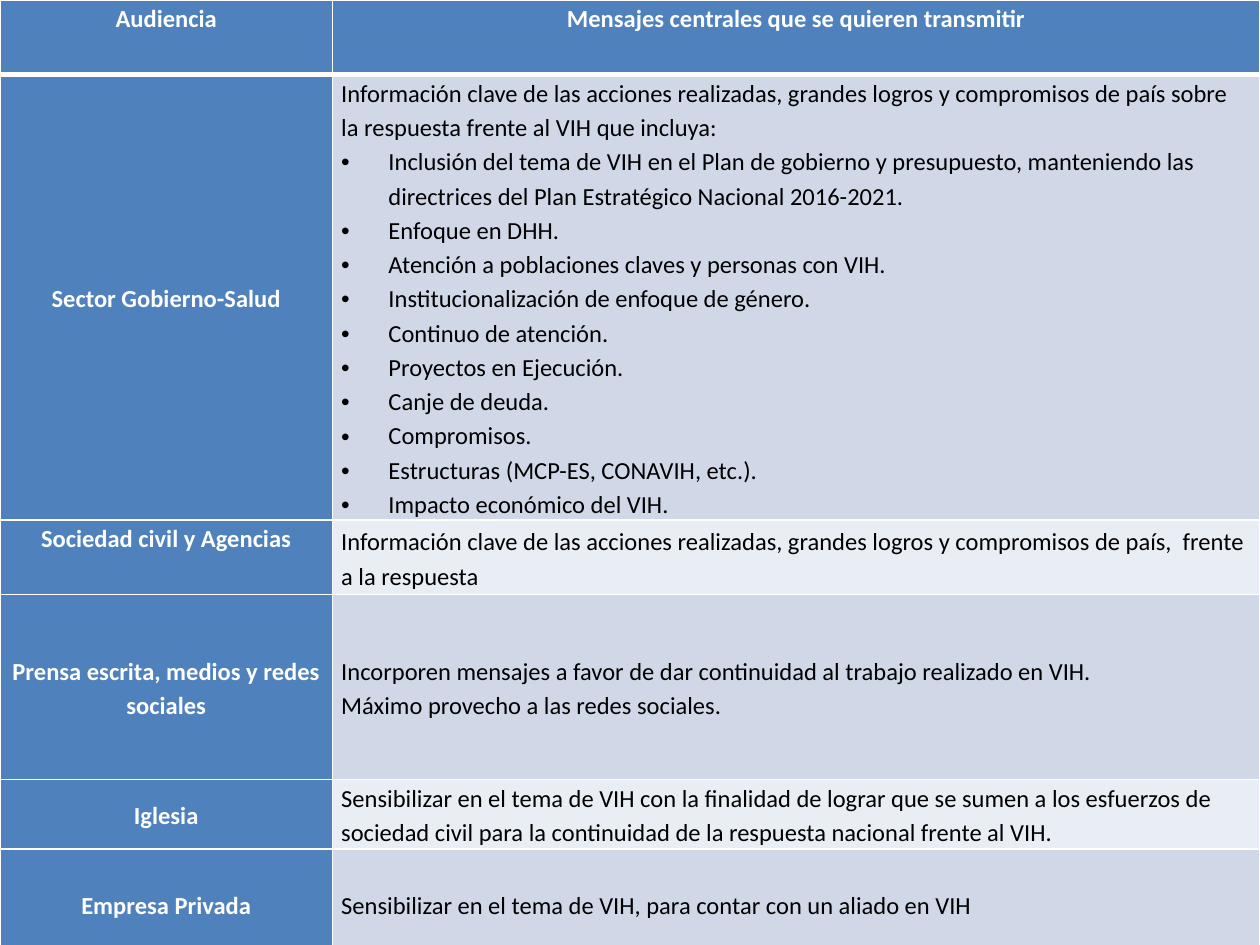
from lxml.etree import SubElement as Sub
from pptx import Presentation
from pptx.dml.color import RGBColor
from pptx.enum.text import MSO_ANCHOR as Anchor, PP_ALIGN as Align
from pptx.oxml.ns import qn
from pptx.util import Pt

WHITE, BLACK = "FFFFFF", "000000"
BLUE, BANDS = "4F81BD", ("D0D8E8", "E9EDF4")
COLUMN_WIDTHS = (190, 530)
ROW_HEIGHTS = (42.5, 246.2, 42.5, 105.8, 39.6, 63.4)
BULLET_INDENT = 27

HEADINGS = ("Audiencia", "Mensajes centrales que se quieren transmitir")
AUDIENCES = [
    ("Sector Gobierno-Salud",
     ["Información clave de las acciones realizadas, grandes logros y compromisos "
      "de país sobre la respuesta frente al VIH que incluya:"],
     ["Inclusión del tema de VIH en el Plan de gobierno y presupuesto, manteniendo "
      "las directrices del Plan Estratégico Nacional 2016-2021.",
      "Enfoque en DHH.",
      "Atención a poblaciones claves y personas con VIH.",
      "Institucionalización de enfoque de género.",
      "Continuo de atención.",
      "Proyectos en Ejecución.",
      "Canje de deuda.",
      "Compromisos.",
      "Estructuras (MCP-ES, CONAVIH, etc.).",
      "Impacto económico del VIH."]),
    ("Sociedad civil y Agencias",
     ["Información clave de las acciones realizadas, grandes logros y compromisos "
      "de país,  frente a la respuesta"], []),
    ("Prensa escrita, medios y redes sociales",
     ["Incorporen mensajes a favor de dar continuidad al trabajo realizado en VIH.",
      "Máximo provecho a las redes sociales."], []),
    ("Iglesia",
     ["Sensibilizar en el tema de VIH con la finalidad de lograr que se sumen a los "
      "esfuerzos de sociedad civil para la continuidad de la respuesta nacional "
      "frente al VIH."], []),
    ("Empresa Privada",
     ["Sensibilizar en el tema de VIH, para contar con un aliado en VIH"], []),
]
TOP_ALIGNED = "Sociedad civil y Agencias"


def color(hex_code):
    """Turn a hex string into a colour."""
    return RGBColor.from_string(hex_code)


def add_borders(cell, top=1, bottom=1):
    """Give a cell white borders of the stated widths."""
    properties = cell._tc.get_or_add_tcPr()
    for side, width in (("L", 1), ("R", 1), ("T", top), ("B", bottom)):
        border = Sub(properties, qn(f"a:ln{side}"), w=str(Pt(width)))
        Sub(Sub(border, qn("a:solidFill")), qn("a:srgbClr"), val=WHITE)


def format_cell(cell, fill, anchor, top=1, bottom=1):
    """Set the borders, fill, margins and anchor of a cell."""
    add_borders(cell, top, bottom)
    cell.fill.solid()
    cell.fill.fore_color.rgb = color(fill)
    cell.margin_left = cell.margin_right = Pt(5)
    cell.margin_top = cell.margin_bottom = Pt(0)
    cell.vertical_anchor = anchor


def add_bullet(paragraph):
    """Give a paragraph a hanging round bullet."""
    properties = paragraph._p.get_or_add_pPr()
    properties.set("marL", str(Pt(BULLET_INDENT)))
    properties.set("indent", str(-Pt(BULLET_INDENT)))
    Sub(properties, qn("a:buFont"), typeface="Arial")
    Sub(properties, qn("a:buChar"), char="•")


def write_cell(cell, lines, bullets=(), heading=False):
    """Write plain lines and then bulleted lines into a cell."""
    for index, words in enumerate([*lines, *bullets]):
        frame = cell.text_frame
        paragraph = frame.add_paragraph() if index else frame.paragraphs[0]
        paragraph.alignment = Align.CENTER if heading else Align.LEFT
        paragraph.line_spacing = 1.15
        if index >= len(lines):
            add_bullet(paragraph)
        run = paragraph.add_run()
        run.text = words
        run.font.name, run.font.size = "Calibri", Pt(14)
        run.font.bold = heading
        run.font.color.rgb = color(WHITE if heading else BLACK)


def add_message_table(slide):
    """Add the table grid with its column widths and row heights."""
    messages = slide.shapes.add_table(
        len(ROW_HEIGHTS), len(COLUMN_WIDTHS), Pt(0), Pt(0),
        Pt(sum(COLUMN_WIDTHS)), Pt(sum(ROW_HEIGHTS))).table
    for column, width in zip(messages.columns, COLUMN_WIDTHS):
        column.width = Pt(width)
    for row, height in zip(messages.rows, ROW_HEIGHTS):
        row.height = Pt(height)
    return messages


def main():
    """Build the slide of audiences and messages."""
    deck = Presentation()
    deck.slide_width, deck.slide_height = Pt(720), Pt(540)
    messages = add_message_table(deck.slides.add_slide(deck.slide_layouts[6]))
    for column, heading in enumerate(HEADINGS):
        cell = messages.cell(0, column)
        format_cell(cell, BLUE, Anchor.TOP, bottom=3)
        write_cell(cell, [heading], heading=True)
    for row, (audience, lines, bullets) in enumerate(AUDIENCES, start=1):
        top = 3 if row == 1 else 1
        anchor = Anchor.TOP if audience == TOP_ALIGNED else Anchor.MIDDLE
        audience_cell, message_cell = messages.cell(row, 0), messages.cell(row, 1)
        format_cell(audience_cell, BLUE, anchor, top)
        write_cell(audience_cell, [audience], heading=True)
        format_cell(message_cell, BANDS[(row - 1) % 2], Anchor.MIDDLE, top)
        write_cell(message_cell, lines, bullets)
    deck.save("out.pptx")


if __name__ == "__main__":
    main()
